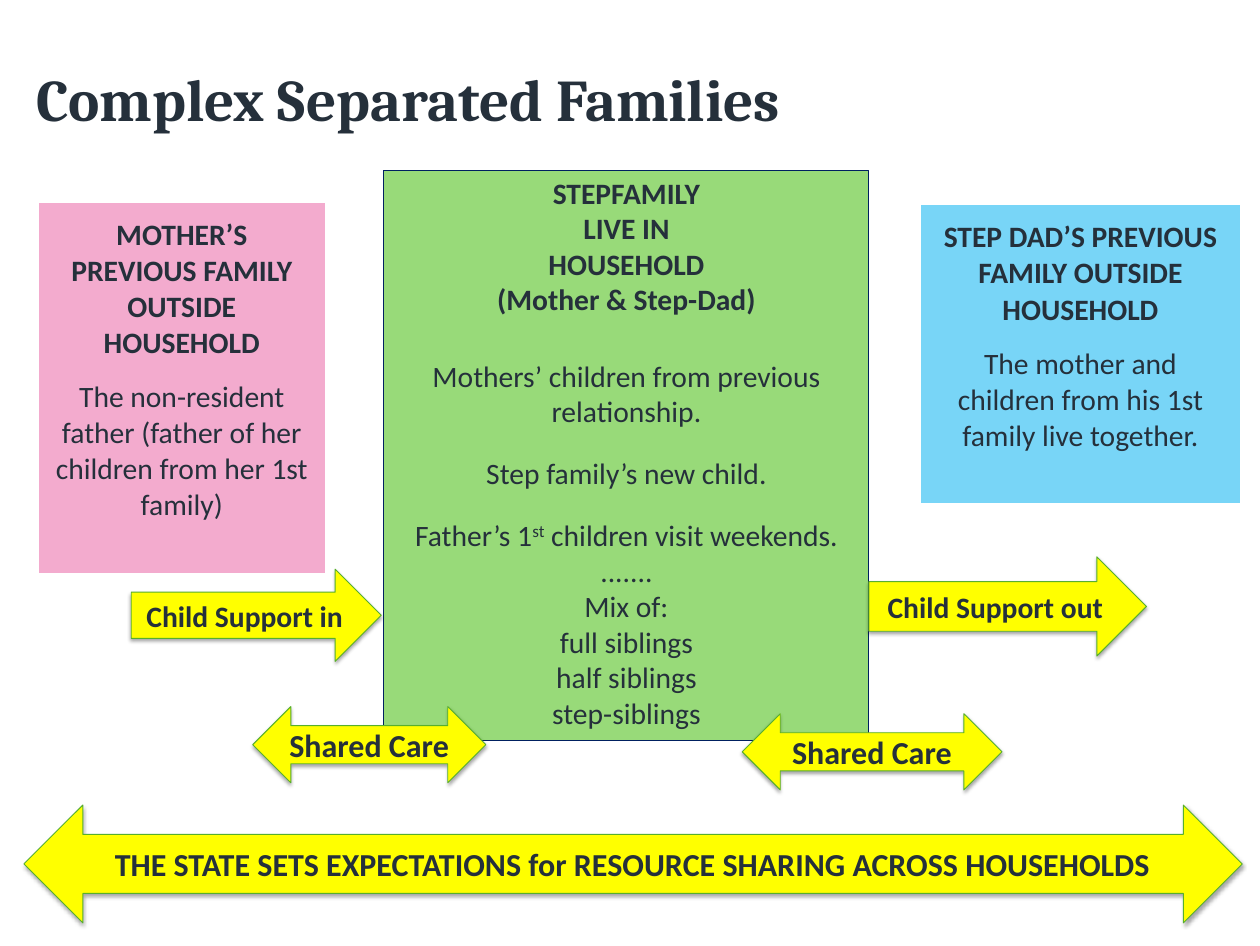
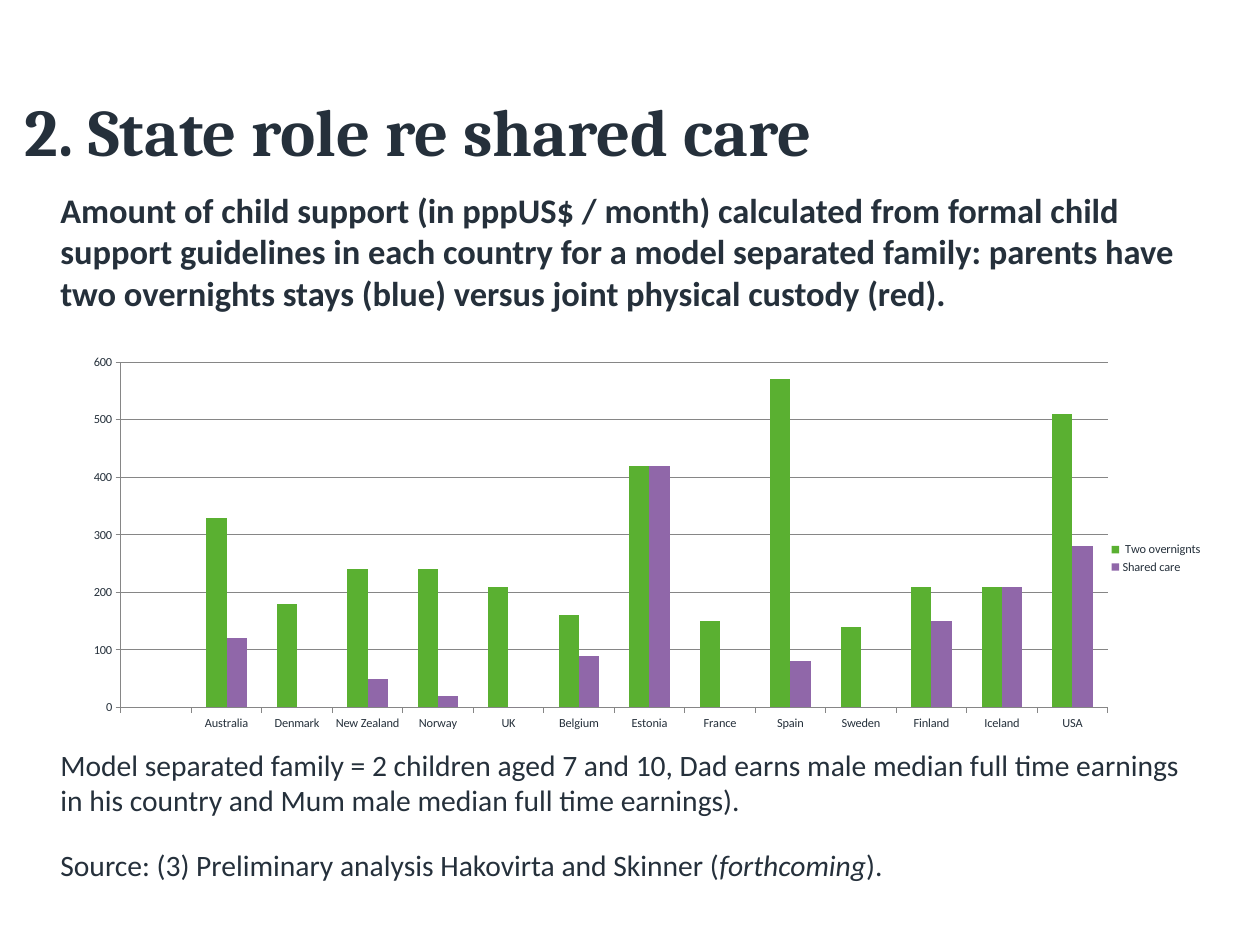
import dataclasses
import typing

import lxml.etree
import pptx
import pptx.chart.chart
import pptx.chart.data
import pptx.dml.color
import pptx.enum.chart
import pptx.enum.shapes
import pptx.enum.text
import pptx.oxml.ns
import pptx.presentation
import pptx.shapes.autoshape
import pptx.slide
import pptx.text.text
import pptx.util

Inches = pptx.util.Inches
Pt = pptx.util.Pt
qn = pptx.oxml.ns.qn
Align = pptx.enum.text.PP_ALIGN
Anchor = pptx.enum.text.MSO_ANCHOR
Preset = pptx.enum.shapes.MSO_SHAPE


@dataclasses.dataclass(frozen=True)
class Theme:
    ink: str = "25303B"
    navy: str = "002060"
    household: str = "98DA79"
    arrow: str = "FFFF00"
    arrow_line: str = "57AF2D"
    pink: str = "EE88BA"
    blue: str = "00B0F0"
    axis: str = "868686"
    bars: tuple[str, str] = ("5AB031", "9067A9")
    shadow: str = "000000"
    title_font: str = "Cambria"
    body_font: str = "Calibri"
    lead_size: float = 28
    label_size: float = 26
    text_size: float = 24
    chart_size: float = 10
    line_width: float = 0.75


THEME = Theme()


class Box(typing.NamedTuple):
    left: float
    top: float
    width: float
    height: float

    def lengths(self) -> list[int]:
        return [Inches(value) for value in self]


class Run(typing.NamedTuple):
    text: str
    italic: bool = False
    superscript: bool = False


@dataclasses.dataclass(frozen=True)
class Line:
    runs: tuple[Run, ...]
    bold: bool = False
    size: float = THEME.text_size
    space_before: float = 0
    font_name: str = THEME.body_font


@dataclasses.dataclass(frozen=True)
class Arrow:
    box: Box
    preset: Preset
    text: str
    size: float = THEME.label_size


@dataclasses.dataclass(frozen=True)
class FamilyCard:
    box: Box
    colour: str
    opacity: int
    heading: str
    text: str


ARROWS = (
    Arrow(Box(0.27, 9.08, 13.74, 1.33), Preset.LEFT_RIGHT_ARROW,
          "THE STATE SETS EXPECTATIONS for RESOURCE SHARING ACROSS HOUSEHOLDS"),
    Arrow(Box(2.85, 7.97, 2.63, 0.86), Preset.LEFT_RIGHT_ARROW, "Shared Care"),
    Arrow(Box(8.37, 8.05, 2.93, 0.86), Preset.LEFT_RIGHT_ARROW, "Shared Care"),
    Arrow(Box(9.8, 6.28, 3.13, 1.12), Preset.RIGHT_ARROW, "Child Support out", THEME.text_size),
    Arrow(Box(1.48, 6.42, 2.82, 1.04), Preset.RIGHT_ARROW, "Child Support in", THEME.text_size),
)

CARDS = (
    FamilyCard(Box(0.43, 2.28, 3.24, 4.19), THEME.pink, 70,
               "MOTHER’S PREVIOUS FAMILY OUTSIDE HOUSEHOLD",
               "The non-resident father (father of her children from her 1st family)"),
    FamilyCard(Box(10.38, 2.31, 3.61, 3.37), THEME.blue, 53,
               "STEP DAD’S PREVIOUS FAMILY OUTSIDE HOUSEHOLD",
               "The mother and children from his 1st family live together."),
)


def plain(text: str, **options: typing.Any) -> Line:
    return Line((Run(text),), **options)


HOUSEHOLD_LINES = (
    *(plain(text, bold=True) for text in
      ("STEPFAMILY", "LIVE IN", "HOUSEHOLD", "(Mother & Step-Dad)")),
    plain("Mothers’ children from previous relationship.", space_before=33.7),
    plain("Step family’s new child.", space_before=21.5),
    Line((Run("Father’s 1"), Run("st", superscript=True), Run(" children visit weekends.")),
         space_before=21.5),
    *(plain(text) for text in
      (".......", "Mix of:", "full siblings", "half siblings", "step-siblings")),
)

BODY_LINES = (
    plain("Amount of child support (in pppUS$ / month) calculated from formal child support "
          "guidelines in each country for a model separated family: parents have two overnights "
          "stays (blue) versus joint physical custody (red).", bold=True, size=THEME.lead_size),
    plain("Model separated family = 2 children aged 7 and 10, Dad earns male median full time "
          "earnings in his country and Mum male median full time earnings).", space_before=352),
    Line((Run("Source: (3) Preliminary analysis Hakovirta and Skinner ("),
          Run("forthcoming", italic=True), Run(").")), space_before=24),
)

COUNTRIES = ("", "Australia", "Denmark", "New Zealand", "Norway", "UK", "Belgium", "Estonia",
             "France", "Spain", "Sweden", "Finland", "Iceland", "USA")
SUPPORT = {
    " Two overnignts": (None, 330, 180, 240, 240, 210, 160, 420, 150, 570, 140, 210, 210, 510),
    "Shared care": (None, 120, 0, 50, 20, 0, 90, 420, 0, 80, 0, 150, 210, 280),
}


def rgb(colour: str) -> pptx.dml.color.RGBColor:
    return pptx.dml.color.RGBColor.from_string(colour)


def apply(target: typing.Any, formats: dict[str, typing.Any]) -> None:
    for name, value in formats.items():
        setattr(target, name, value)


def write(frame: pptx.text.text.TextFrame, lines: typing.Sequence[Line], align: Align,
          anchor: Anchor = Anchor.TOP, insets: tuple[float, float] = (0.1, 0.05)) -> None:
    side, edge = (Inches(value) for value in insets)
    apply(frame, {
        "word_wrap": True, "auto_size": pptx.enum.text.MSO_AUTO_SIZE.NONE,
        "vertical_anchor": anchor, "margin_left": side, "margin_right": side,
        "margin_top": edge, "margin_bottom": edge,
    })
    fill_paragraphs(frame, lines, align)


def fill_paragraphs(frame: pptx.text.text.TextFrame, lines: typing.Sequence[Line],
                    align: Align) -> None:
    for index, line in enumerate(lines):
        paragraph = frame.add_paragraph() if index else frame.paragraphs[0]
        properties = paragraph._p.get_or_add_pPr()
        apply(paragraph, {"alignment": align, "space_before": Pt(line.space_before)})
        properties.set("marL", "0")
        properties.set("indent", "0")
        lxml.etree.SubElement(properties, qn("a:buNone"))
        for part in line.runs:
            run = paragraph.add_run()
            run.text = part.text
            apply(run.font, {"name": line.font_name, "size": Pt(line.size),
                             "bold": line.bold, "italic": part.italic})
            run.font.color.rgb = rgb(THEME.ink)
            if part.superscript:
                run._r.get_or_add_rPr().set("baseline", "30000")


def place(shape: typing.Any, box: Box) -> None:
    apply(shape, dict(zip(("left", "top", "width", "height"), box.lengths())))


def add_titled_slide(presentation: pptx.presentation.Presentation, layout_index: int,
                     title: str, box: Box, size: float) -> pptx.slide.Slide:
    slide = presentation.slides.add_slide(presentation.slide_layouts[layout_index])
    place(slide.shapes.title, box)
    line = plain(title, bold=True, size=size, font_name=THEME.title_font)
    write(slide.shapes.title.text_frame, [line], Align.LEFT, Anchor.MIDDLE, (0.14, 0.07))
    return slide


def add_block(slide: pptx.slide.Slide, preset: Preset, box: Box, fill: str,
              outline: str) -> pptx.shapes.autoshape.Shape:
    shape = slide.shapes.add_shape(preset, *box.lengths())
    shape.shadow.inherit = False
    shape.fill.solid()
    shape.fill.fore_color.rgb = rgb(fill)
    shape.line.color.rgb = rgb(outline)
    shape.line.width = Pt(THEME.line_width)
    return shape


def add_alpha(colour: typing.Any, percent: int) -> None:
    lxml.etree.SubElement(colour, qn("a:alpha")).set("val", str(percent * 1000))


def add_arrow(slide: pptx.slide.Slide, arrow: Arrow) -> None:
    shape = add_block(slide, arrow.preset, arrow.box, THEME.arrow, THEME.arrow_line)
    effects = shape._element.spPr.find(qn("a:effectLst"))
    shadow = lxml.etree.SubElement(effects, qn("a:outerShdw"))
    for name, value in {"blurRad": Pt(3.1), "dist": Pt(1.8), "dir": 90 * 60000,
                        "rotWithShape": 0}.items():
        shadow.set(name, str(int(value)))
    colour = lxml.etree.SubElement(shadow, qn("a:srgbClr"))
    colour.set("val", THEME.shadow)
    add_alpha(colour, 35)
    write(shape.text_frame, [plain(arrow.text, bold=True, size=arrow.size)],
          Align.CENTER, Anchor.MIDDLE)


def add_card(slide: pptx.slide.Slide, card: FamilyCard) -> None:
    table = slide.shapes.add_table(1, 1, *card.box.lengths()).table
    apply(table, {"first_row": False, "horz_banding": False})
    cell = table.cell(0, 0)
    margin = Inches(0.17)
    apply(cell, {f"margin_{side}": margin for side in ("left", "right", "top", "bottom")})
    cell.fill.solid()
    cell.fill.fore_color.rgb = rgb(card.colour)
    add_alpha(next(cell._tc.tcPr.iter(qn("a:srgbClr"))), card.opacity)
    lines = (plain(card.heading, bold=True), plain(card.text, space_before=14.6))
    fill_paragraphs(cell.text_frame, lines, Align.CENTER)


def set_layout(parent: typing.Any, index: int, values: dict[str, typing.Any]) -> None:
    for existing in parent.findall(qn("c:layout")):
        parent.remove(existing)
    layout = lxml.etree.Element(qn("c:layout"))
    manual = lxml.etree.SubElement(layout, qn("c:manualLayout"))
    for name, value in values.items():
        lxml.etree.SubElement(manual, qn(f"c:{name}")).set("val", str(value))
    parent.insert(index, layout)


def add_support_chart(slide: pptx.slide.Slide, box: Box) -> None:
    data = pptx.chart.data.CategoryChartData()
    data.categories = COUNTRIES
    for name, values in SUPPORT.items():
        data.add_series(name, values)
    kind = pptx.enum.chart.XL_CHART_TYPE.COLUMN_CLUSTERED
    chart = slide.shapes.add_chart(kind, *box.lengths(), data).chart
    apply(chart, {"has_title": False, "has_legend": True})
    apply(chart.font, {"name": THEME.body_font, "size": Pt(THEME.chart_size)})
    chart.font.color.rgb = rgb(THEME.ink)
    apply(chart.legend, {"position": pptx.enum.chart.XL_LEGEND_POSITION.RIGHT,
                         "include_in_layout": False})
    plot = chart.plots[0]
    apply(plot, {"gap_width": 150, "overlap": 0, "vary_by_categories": False})
    for series, colour in zip(plot.series, THEME.bars):
        series.format.fill.solid()
        series.format.fill.fore_color.rgb = rgb(colour)
    apply(chart.value_axis, {"minimum_scale": 0, "maximum_scale": 600, "major_unit": 100,
                             "has_major_gridlines": True})
    for axis in (chart.category_axis, chart.value_axis):
        axis.major_tick_mark = pptx.enum.chart.XL_TICK_MARK.OUTSIDE
        axis.format.line.color.rgb = rgb(THEME.axis)
    chart.value_axis.major_gridlines.format.line.color.rgb = rgb(THEME.axis)
    edges = {"xMode": "edge", "yMode": "edge"}
    plot_area = next(chart._chartSpace.iter(qn("c:plotArea")))
    set_layout(plot_area, 0, {"layoutTarget": "inner", **edges,
                              "x": 0.07, "y": 0.04, "w": 0.74, "h": 0.8})
    set_layout(chart.legend._element, 1, {**edges, "x": 0.81, "y": 0.45})


def build_families(presentation: pptx.presentation.Presentation) -> None:
    slide = add_titled_slide(presentation, 5, "Complex Separated Families",
                             Box(0.27, 0.47, 11.16, 1.27), 48)
    household = add_block(slide, Preset.RECTANGLE, Box(4.33, 1.92, 5.47, 6.43),
                          THEME.household, THEME.navy)
    write(household.text_frame, HOUSEHOLD_LINES, Align.CENTER)
    for card in CARDS:
        add_card(slide, card)
    for arrow in ARROWS:
        add_arrow(slide, arrow)


def build_state_role(presentation: pptx.presentation.Presentation) -> None:
    slide = add_titled_slide(presentation, 1, "2. State role re shared care",
                             Box(0.14, 0.86, 11.25, 1.2), 54)
    body = slide.placeholders[1]
    place(body, Box(0.54, 2.06, 12.9, 8.34))
    write(body.text_frame, BODY_LINES, Align.LEFT, insets=(0.14, 0.07))
    add_support_chart(slide, Box(0.31, 3.89, 15.04, 4.87))


def main() -> None:
    presentation = pptx.Presentation()
    apply(presentation, {"slide_width": Inches(14.21), "slide_height": Inches(10.67)})
    build_families(presentation)
    build_state_role(presentation)
    presentation.save("out.pptx")


if __name__ == "__main__":
    main()
